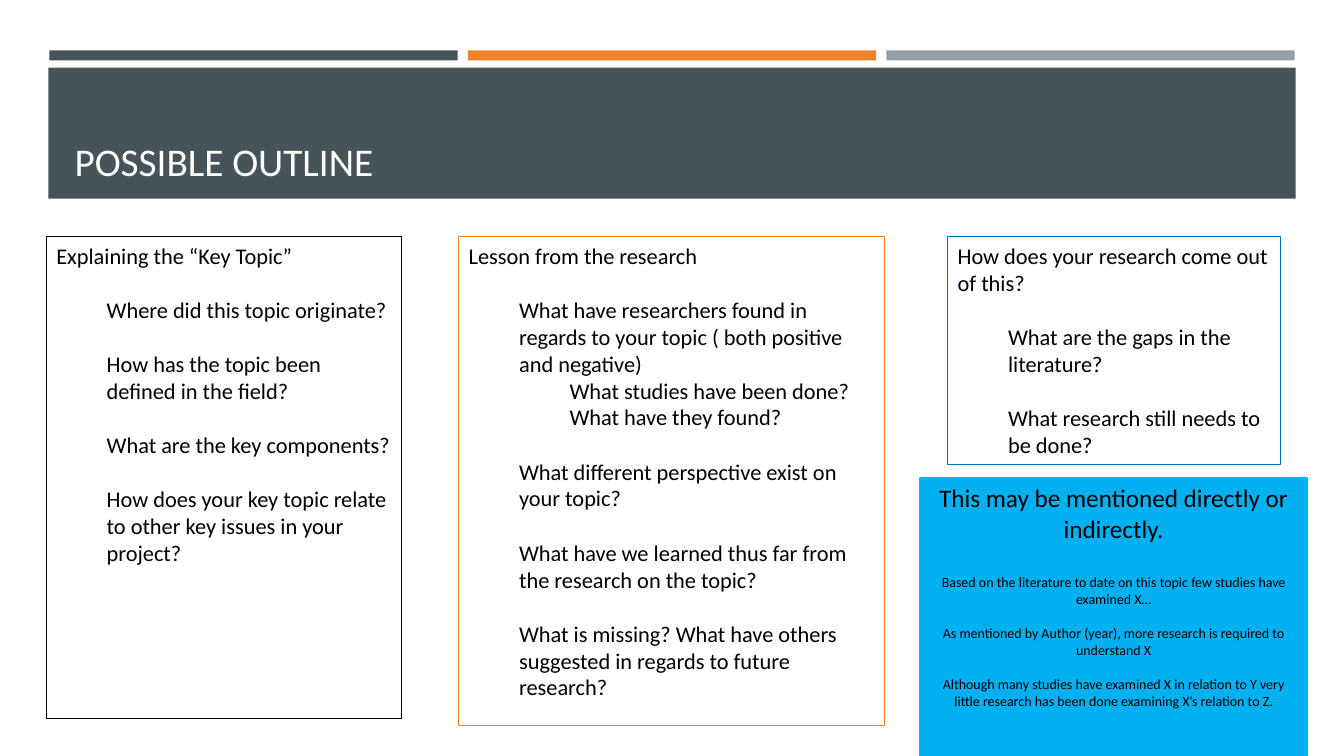
from dataclasses import dataclass

from pptx import Presentation
from pptx.dml.color import RGBColor
from pptx.enum.shapes import MSO_SHAPE
from pptx.enum.text import MSO_ANCHOR, MSO_AUTO_SIZE, PP_ALIGN
from pptx.util import Inches, Pt


@dataclass(frozen=True)
class Theme:
    font: str = "Calibri"
    slate: str = "465359"
    orange: str = "ED8428"
    gray: str = "969FA7"
    blue: str = "0070C0"
    sky: str = "00B0F0"
    black: str = "000000"
    white: str = "FFFFFF"
    title_size: float = 28
    lead_size: float = 18
    body_size: float = 16
    note_size: float = 10
    outline: float = 0.75
    heavy_outline: float = 1.75
    indent: float = 0.5
    line_height: float = 1.22


class OutlineSlide:
    def __init__(self, presentation, theme):
        self.theme = theme
        self.slide = presentation.slides.add_slide(presentation.slide_layouts[5])

    def add_rectangle(self, left, top, width, height, fill=None, line=None, line_width=0):
        shape = self.slide.shapes.add_shape(
            MSO_SHAPE.RECTANGLE, Inches(left), Inches(top), Inches(width), Inches(height)
        )
        shape.shadow.inherit = False
        if fill:
            shape.fill.solid()
            shape.fill.fore_color.rgb = RGBColor.from_string(fill)
        else:
            shape.fill.background()
        if line:
            shape.line.color.rgb = RGBColor.from_string(line)
            shape.line.width = Pt(line_width)
        else:
            shape.line.fill.background()
        return shape

    def add_run(self, paragraph, text, size, color):
        run = paragraph.add_run()
        run.text = text
        run.font.name = self.theme.font
        run.font.size = Pt(size)
        run.font.color.rgb = RGBColor.from_string(color)

    def add_title(self, text, left, top, width, height):
        title = self.slide.shapes.title
        title.left, title.top = Inches(left), Inches(top)
        title.width, title.height = Inches(width), Inches(height)
        frame = title.text_frame
        frame.word_wrap = True
        frame.auto_size = MSO_AUTO_SIZE.NONE
        frame.vertical_anchor = MSO_ANCHOR.BOTTOM
        paragraph = frame.paragraphs[0]
        paragraph.alignment = PP_ALIGN.LEFT
        self.add_run(paragraph, text, self.theme.title_size, self.theme.white)
        title._element.getparent().append(title._element)

    def fill_text(self, shape, entries, alignment):
        frame = shape.text_frame
        frame.word_wrap = True
        frame.vertical_anchor = MSO_ANCHOR.TOP
        for index, (text, level, size, gap) in enumerate(entries):
            paragraph = frame.add_paragraph() if index else frame.paragraphs[0]
            paragraph.alignment = alignment
            paragraph.space_before = Pt(gap)
            paragraph.level = level
            properties = paragraph._p.get_or_add_pPr()
            properties.set("marL", str(Inches(level * self.theme.indent)))
            properties.set("indent", "0")
            self.add_run(paragraph, text, size, self.theme.black)

    def add_topic_box(self, left, width, height, line, heading, points):
        shape = self.add_rectangle(left, 2.35, width, height, None, line, self.theme.outline)
        size = self.theme.body_size
        gap = size * self.theme.line_height
        entries = [(heading, 0, size, 0)]
        entries += [(text, level, size, gap if level == 1 else 0) for level, text in points]
        self.fill_text(shape, entries, PP_ALIGN.LEFT)
        shape.text_frame.auto_size = MSO_AUTO_SIZE.SHAPE_TO_FIT_TEXT

    def add_callout(self, left, top, width, height, lead, examples):
        theme = self.theme
        shape = self.add_rectangle(
            left, top, width, height, theme.sky, theme.sky, theme.heavy_outline
        )
        entries = [(lead, 0, theme.lead_size, 0)]
        for index, text in enumerate(examples):
            gap_size = theme.note_size if index else theme.lead_size
            entries.append((text, 0, theme.note_size, gap_size * theme.line_height))
        self.fill_text(shape, entries, PP_ALIGN.CENTER)


def main():
    theme = Theme()
    presentation = Presentation()
    presentation.slide_width = Inches(13.33)
    presentation.slide_height = Inches(7.5)
    outline = OutlineSlide(presentation, theme)

    for column, color in enumerate((theme.slate, theme.orange, theme.gray)):
        outline.add_rectangle(0.49 + column * 4.15, 0.5, 4.05, 0.1, color)
    outline.add_rectangle(0.48, 0.67, 12.37, 1.3, theme.slate)
    outline.add_title("POSSIBLE OUTLINE", 0.64, 0.77, 12.06, 1.11)

    outline.add_topic_box(4.55, 4.22, 4.85, theme.orange, "Lesson from the research", [
        (1, "What have researchers found in regards to your topic ( both positive and negative)"),
        (2, "What studies have been done?"),
        (2, "What have they found?"),
        (1, "What different perspective exist on your topic?"),
        (1, "What have we learned thus far from the research on the topic?"),
        (1, "What is missing? What have others suggested in regards to future research?"),
    ])
    outline.add_topic_box(9.4, 3.3, 2.26, theme.blue, "How does your research come out of this?", [
        (1, "What are the gaps in the literature?"),
        (1, "What research still needs to be done?"),
    ])
    outline.add_topic_box(0.46, 3.52, 4.78, theme.black, "Explaining the “Key Topic”", [
        (1, "Where did this topic originate?"),
        (1, "How has the topic been defined in the field?"),
        (1, "What are the key components?"),
        (1, "How does your key topic relate to other key issues in your project?"),
    ])
    outline.add_callout(9.13, 4.74, 3.83, 2.76, "This may be mentioned directly or indirectly.", [
        "Based on the literature to date on this topic few studies have examined X…",
        "As mentioned by Author (year), more research is required to understand X",
        "Although many studies have examined X in relation to Y very little research "
        "has been done examining X’s relation to Z.",
    ])
    presentation.save("out.pptx")


if __name__ == "__main__":
    main()
